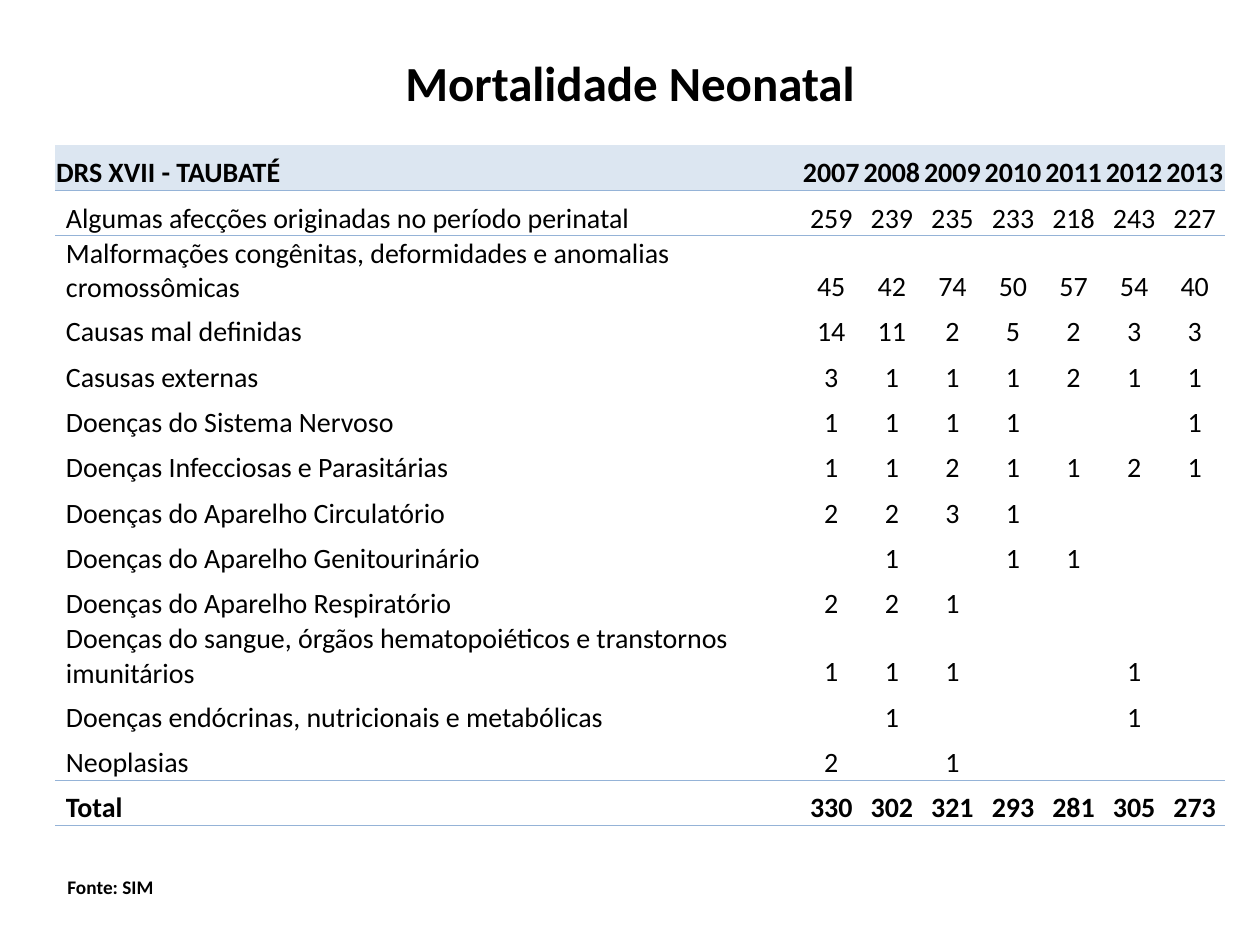
from dataclasses import dataclass
from typing import NamedTuple

from lxml.etree import SubElement
from pptx import Presentation
from pptx.dml.color import RGBColor as Color
from pptx.enum.text import MSO_ANCHOR as Anchor, MSO_AUTO_SIZE as AutoSize, PP_ALIGN as Align
from pptx.oxml.ns import qn
from pptx.util import Emu, Pt

"""Builds a slide with a table of neonatal deaths by cause and year."""

PX = 914400 // 126


@dataclass(frozen=True)
class Theme:
    font: str = "Calibri"
    ink: str = "000000"
    header: str = "DCE6F1"
    rule: str = "95B3D7"
    rule_width: float = 0.5
    title: int = 28
    body: int = 16
    source: int = 11
    table_style: str = "{2D5ABB26-0587-4C30-8999-92F81FD0307C}"


class Area(NamedTuple):
    left: int
    top: int
    width: int
    height: int

    def emu(self) -> list[Emu]:
        return [Emu(length * PX) for length in self]


class Row(NamedTuple):
    label: str
    counts: str
    bold: bool = False
    indent: int = 11
    fill: str | None = None
    rules: tuple[str, ...] = ()


THEME = Theme()
PAGE = Area(0, 0, 1260, 945)
TITLE = Area(63, 38, 1134, 87)
TABLE = Area(55, 145, 1170, 635)
SOURCE = Area(55, 869, 112, 37)
LABEL_WIDTH = 746

ROWS = [
    Row("DRS XVII - TAUBATÉ", "2007|2008|2009|2010|2011|2012|2013",
        bold=True, indent=1, fill=THEME.header, rules=("lnB",)),
    Row("Algumas afecções originadas no período perinatal",
        "259|239|235|233|218|243|227", rules=("lnT",)),
    Row("Malformações congênitas, deformidades e anomalias cromossômicas",
        "45|42|74|50|57|54|40"),
    Row("Causas mal definidas", "14|11|2|5|2|3|3"),
    Row("Casusas externas", "3|1|1|1|2|1|1"),
    Row("Doenças do Sistema Nervoso", "1|1|1|1|||1"),
    Row("Doenças Infecciosas e Parasitárias", "1|1|2|1|1|2|1"),
    Row("Doenças do Aparelho Circulatório", "2|2|3|1|||"),
    Row("Doenças do Aparelho Genitourinário", "|1||1|1||"),
    Row("Doenças do Aparelho Respiratório", "2|2|1||||"),
    Row("Doenças do sangue, órgãos hematopoiéticos e transtornos imunitários",
        "1|1|1|||1|"),
    Row("Doenças endócrinas, nutricionais e metabólicas", "|1||||1|"),
    Row("Neoplasias", "2||1||||", rules=("lnB",)),
    Row("Total", "330|302|321|293|281|305|273", bold=True, rules=("lnT", "lnB")),
]


def write(para, text: str, size: int, bold: bool, align: Align = Align.LEFT) -> None:
    """Add one formatted run to a paragraph."""
    para.alignment = align
    span = para.add_run()
    span.text = text
    span.font.name = THEME.font
    span.font.size = Pt(size)
    span.font.bold = bold
    span.font.color.rgb = Color.from_string(THEME.ink)


def draw_rule(cell, side: str) -> None:
    """Draw a thin border on one side of a cell."""
    line = SubElement(cell._tc.get_or_add_tcPr(), qn(f"a:{side}"), w=str(Pt(THEME.rule_width)))
    fill = SubElement(line, qn("a:solidFill"))
    SubElement(fill, qn("a:srgbClr"), val=THEME.rule)


def fill_cell(cell, text: str, row: Row, is_label: bool) -> None:
    """Format a cell and write its text, if it has any."""
    cell.vertical_anchor = Anchor.BOTTOM
    cell.margin_left = Emu((row.indent if is_label else 1) * PX)
    cell.margin_right = cell.margin_top = Emu(PX)
    cell.margin_bottom = Emu(0)
    for side in row.rules:
        draw_rule(cell, side)
    if row.fill:
        cell.fill.solid()
        cell.fill.fore_color.rgb = Color.from_string(row.fill)
    else:
        cell.fill.background()
    if text:
        align = Align.LEFT if is_label else Align.CENTER
        write(cell.text_frame.paragraphs[0], text, THEME.body, row.bold, align)


def draw_table(page, rows: list[Row]) -> None:
    """Draw the table of deaths with one wide label column and equal year columns."""
    years = len(rows[0].counts.split("|"))
    table = page.shapes.add_table(len(rows), years + 1, *TABLE.emu()).table
    table.first_row = table.horz_banding = False
    table._tbl.tblPr.find(qn("a:tableStyleId")).text = THEME.table_style
    for index, column in enumerate(table.columns):
        year_width = (TABLE.width - LABEL_WIDTH) * PX // years
        column.width = Emu(year_width if index else LABEL_WIDTH * PX)
    for line, row in zip(table.rows, rows):
        line.height = Emu(TABLE.height * PX // len(rows))
        texts = [row.label, *row.counts.split("|")]
        for index, (cell, text) in enumerate(zip(line.cells, texts)):
            fill_cell(cell, text, row, index == 0)


def draw_title(page, text: str) -> None:
    """Place and write the slide title."""
    title = page.shapes.title
    title.left, title.top, title.width, title.height = TITLE.emu()
    title.text_frame.vertical_anchor = Anchor.MIDDLE
    write(title.text_frame.paragraphs[0], text, THEME.title, True, Align.CENTER)


def draw_source(page, text: str) -> None:
    """Write the data source under the table."""
    frame = page.shapes.add_textbox(*SOURCE.emu()).text_frame
    frame.word_wrap = False
    frame.auto_size = AutoSize.SHAPE_TO_FIT_TEXT
    write(frame.paragraphs[0], text, THEME.source, True)


def main() -> None:
    """Build and save the deck."""
    deck = Presentation()
    deck.slide_width, deck.slide_height = PAGE.emu()[2:]
    page = deck.slides.add_slide(deck.slide_layouts[5])
    draw_title(page, "Mortalidade Neonatal")
    draw_source(page, "Fonte: SIM")
    draw_table(page, ROWS)
    deck.save("out.pptx")


if __name__ == "__main__":
    main()
